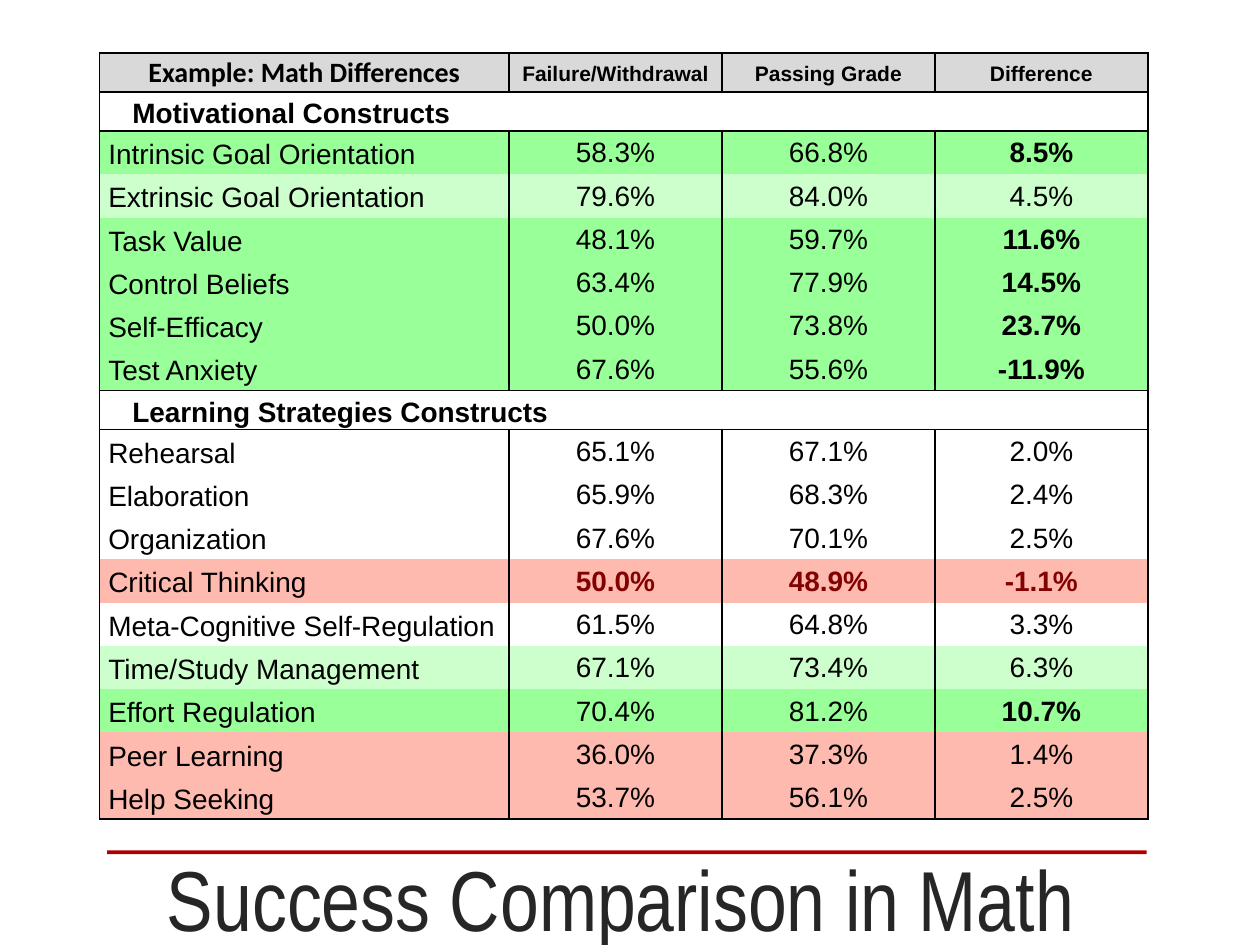
from lxml.etree import SubElement
from pptx import Presentation
from pptx.dml.color import RGBColor
from pptx.enum.shapes import MSO_SHAPE
from pptx.enum.text import MSO_ANCHOR, MSO_AUTO_SIZE, PP_ALIGN
from pptx.oxml.ns import qn
from pptx.util import Inches, Pt

GREEN, PALE, ROSE, GRAY = "99FF99", "CCFFCC", "FFBAB0", "D9D9D9"
WIDE = dict(margin_left=0.07, margin_right=0.07, margin_top=0, margin_bottom=0)
DEEP = dict(WIDE, margin_left=0.26)
TIGHT = dict(margin_left=0.01, margin_right=0.01, margin_top=0.01, margin_bottom=0)
HEADS = ["Example: Math Differences", "Failure/Withdrawal", "Passing Grade", "Difference"]
GROUPS = {
    "Motivational Constructs": [
        ("Intrinsic Goal Orientation", 58.3, 66.8, 8.5, GREEN),
        ("Extrinsic Goal Orientation", 79.6, 84.0, 4.5, PALE),
        ("Task Value", 48.1, 59.7, 11.6, GREEN),
        ("Control Beliefs", 63.4, 77.9, 14.5, GREEN),
        ("Self-Efficacy", 50.0, 73.8, 23.7, GREEN),
        ("Test Anxiety", 67.6, 55.6, -11.9, GREEN),
    ],
    "Learning Strategies Constructs": [
        ("Rehearsal", 65.1, 67.1, 2.0, None),
        ("Elaboration", 65.9, 68.3, 2.4, None),
        ("Organization", 67.6, 70.1, 2.5, None),
        ("Critical Thinking", 50.0, 48.9, -1.1, ROSE),
        ("Meta-Cognitive Self-Regulation", 61.5, 64.8, 3.3, None),
        ("Time/Study Management", 67.1, 73.4, 6.3, PALE),
        ("Effort Regulation", 70.4, 81.2, 10.7, GREEN),
        ("Peer Learning", 36.0, 37.3, 1.4, ROSE),
        ("Help Seeking", 53.7, 56.1, 2.5, ROSE),
    ],
}


def tint(code):
    """Turn a hex string into a colour."""
    return RGBColor.from_string(code)


def apply(item, **form):
    """Set each format value on an item."""
    for name, value in form.items():
        setattr(item, name, value)


class Deck:
    """Hold the style and the current slide."""

    def __init__(self):
        """Open a deck with one title-only slide."""
        self.show = Presentation()
        apply(self.show, slide_width=Inches(10), slide_height=Inches(7.5))
        self.slide = self.show.slides.add_slide(self.show.slide_layouts[5])
        self.face, self.size, self.ink, self.edge = "Arial", 16, "000000", "000000"

    def label(self, frame, text, align=PP_ALIGN.LEFT, space=1.0, ink=None, **form):
        """Fill a frame with one line of styled text."""
        line = frame.paragraphs[0]
        apply(line, alignment=align, line_spacing=space)
        run = line.add_run()
        run.text = text
        form = {"name": self.face, "size": Pt(self.size), "bold": False} | form
        apply(run.font, **form)
        run.font.color.rgb = tint(ink or self.ink)

    def title(self, text, left, top, width, height):
        """Place the slide title."""
        box = self.slide.shapes.title
        apply(box, left=Inches(left), top=Inches(top), width=Inches(width), height=Inches(height))
        apply(box.text_frame, word_wrap=True, auto_size=MSO_AUTO_SIZE.NONE,
              vertical_anchor=MSO_ANCHOR.BOTTOM)
        self.label(box.text_frame, text, PP_ALIGN.CENTER, ink="262626",
                   name="Arial Narrow", size=Pt(48.6))

    def rule(self, left, top, width, height, code):
        """Draw a thin filled bar."""
        bar = self.slide.shapes.add_shape(
            MSO_SHAPE.RECTANGLE, Inches(left), Inches(top), Inches(width), Inches(height))
        bar.shadow.inherit = False
        bar.fill.solid()
        bar.fill.fore_color.rgb = tint(code)
        bar.line.fill.background()

    def grid(self, left, top, widths, heights):
        """Add a plain table."""
        frame = self.slide.shapes.add_table(
            len(heights), len(widths), Inches(left), Inches(top),
            Inches(sum(widths)), Inches(sum(heights)))
        table = frame.table
        apply(table, first_row=False, horz_banding=False)
        for col, width in zip(table.columns, widths):
            col.width = Inches(width)
        for row, height in zip(table.rows, heights):
            row.height = Inches(height)
        return table

    def dress(self, cell, sides, fill, pads):
        """Set the borders, fill and margins of a cell."""
        props = cell._tc.get_or_add_tcPr()
        for side in "LRTB":
            line = SubElement(props, qn(f"a:ln{side}"), w=str(Pt(1)))
            if side in sides:
                paint = SubElement(line, qn("a:solidFill"))
                SubElement(paint, qn("a:srgbClr"), val=self.edge)
            else:
                SubElement(line, qn("a:noFill"))
        if fill:
            cell.fill.solid()
            cell.fill.fore_color.rgb = tint(fill)
        else:
            cell.fill.background()
        apply(cell, vertical_anchor=MSO_ANCHOR.MIDDLE,
              **{name: Inches(pad) for name, pad in pads.items()})

    def head(self, table):
        """Fill the heading row."""
        for col, text in enumerate(HEADS):
            cell = table.cell(0, col)
            self.dress(cell, "LRTB", GRAY, WIDE)
            form = {"space": 1.15, "size": Pt(12)} if col else {"name": "Calibri"}
            self.label(cell.text_frame, text, PP_ALIGN.CENTER, bold=True, **form)

    def band(self, table, row, text):
        """Fill a section row that spans the table."""
        for col in range(4):
            self.dress(table.cell(row, col), "LRTB", None, DEEP)
        table.cell(row, 0).merge(table.cell(row, 3))
        self.label(table.cell(row, 0).text_frame, text, space=1.15, bold=True)

    def data(self, table, row, entry, sides):
        """Fill a row with a label and its values."""
        label, *values, fill = entry
        drop = values[-1] < 0 and fill == ROSE
        for col, value in enumerate([label] + values):
            cell = table.cell(row, col)
            self.dress(cell, sides, fill, TIGHT if col else WIDE)
            if col:
                bold = drop or (col == 3 and abs(value) > 8)
                self.label(cell.text_frame, f"{value:.1f}%", PP_ALIGN.CENTER,
                           ink="820101" if drop else None, bold=bold)
            else:
                self.label(cell.text_frame, value, space=1.15)


def main():
    """Build the slide."""
    deck = Deck()
    deck.rule(0.85, 6.75, 8.25, 0.03, "AD0101")
    deck.title("Success Comparison in Math", 0.75, 6.75, 8.35, 0.83)
    low = 0.31
    tall = (6.08 - 3 * low) / sum(map(len, GROUPS.values()))
    heights = [low]
    for group in GROUPS.values():
        heights += [low] + [tall] * len(group)
    table = deck.grid(0.79, 0.42, [3.25] + [1.69] * 3, heights)
    deck.head(table)
    row = 1
    for name, group in GROUPS.items():
        deck.band(table, row, name)
        for place, entry in enumerate(group, 1):
            sides = "LR" + "T" * (place == 1) + "B" * (place == len(group))
            deck.data(table, row + place, entry, sides)
        row += len(group) + 1
    deck.show.save("out.pptx")


if __name__ == "__main__":
    main()
